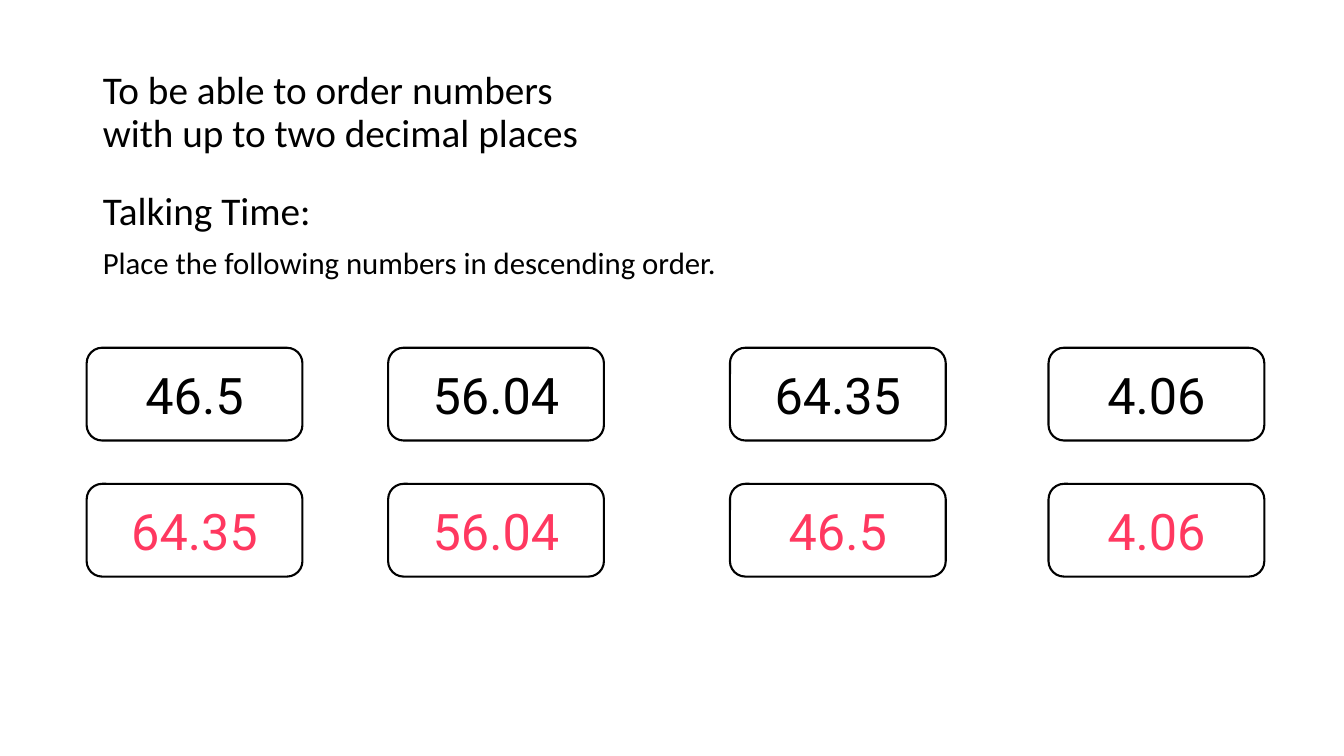
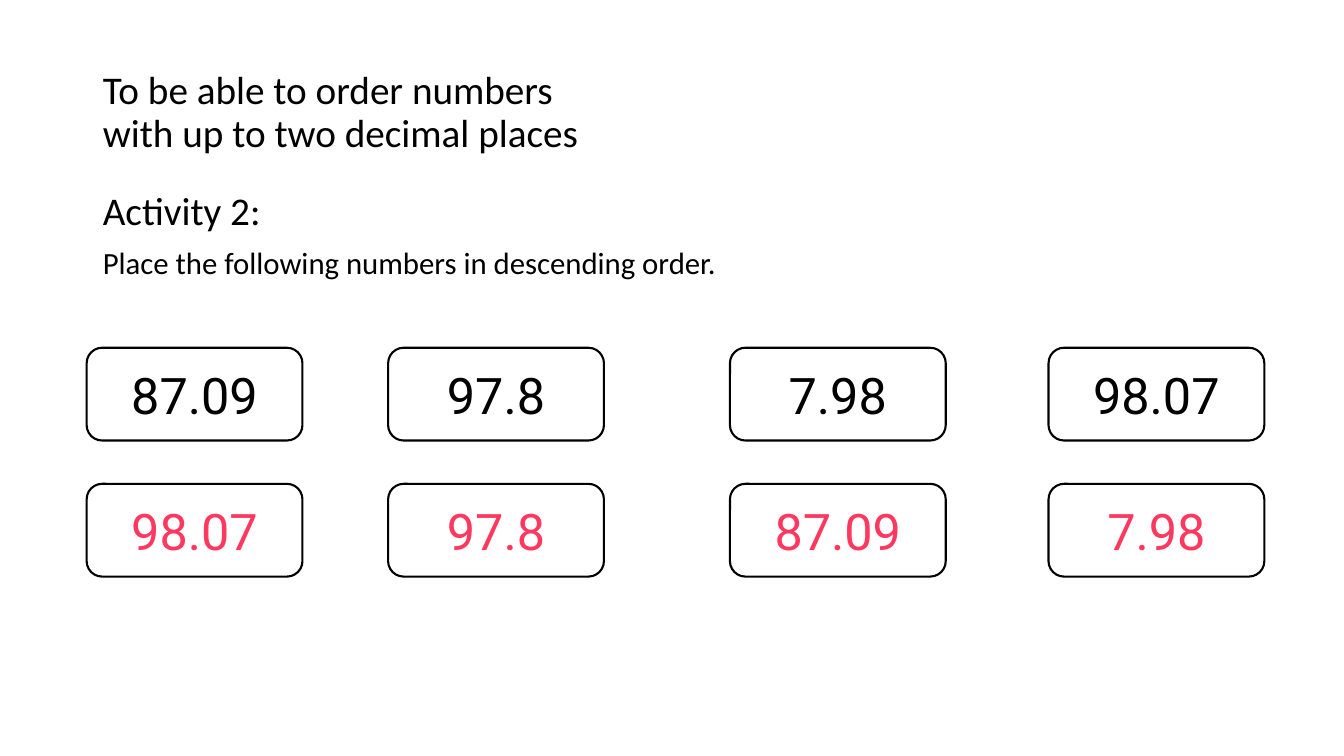
from dataclasses import dataclass

from lxml import etree
from pptx import Presentation
from pptx.dml.color import RGBColor
from pptx.enum.shapes import MSO_SHAPE
from pptx.enum.text import MSO_ANCHOR, MSO_AUTO_SIZE, PP_ALIGN
from pptx.oxml.ns import qn
from pptx.util import Emu, Pt

ROUND = MSO_SHAPE.ROUNDED_RECTANGLE
LEFT, CENTER = PP_ALIGN.LEFT, PP_ALIGN.CENTER
MIDDLE, TOP = MSO_ANCHOR.MIDDLE, MSO_ANCHOR.TOP
NO_FIT = MSO_AUTO_SIZE.NONE
SCALE = 9144  # EMU in one px, 100 px to the inch


@dataclass(frozen=True)
class Theme:
    ink: RGBColor = RGBColor(0x00, 0x00, 0x00)
    paper: RGBColor = RGBColor(0xFF, 0xFF, 0xFF)
    answer: RGBColor = RGBColor(0xFF, 0x38, 0x60)
    font: str = "Calibri"
    digit: str = "Roboto"
    head: int = 28
    task: int = 22
    number: int = 36
    line: float = 1.5


THEME = Theme()

# Shared places, in px
SIZE = (1333, 750)
TITLE_BOX = (92, 40, 1150, 145)
BODY_BOX = (92, 185, 1150, 476)
COLUMNS = (86, 385, 724, 1040)
ROWS = (345, 480)
CARD = (214, 92)

# Wording
GOAL = ("To be able to order numbers ", "with up to two decimal places")
TASK = "Place the following numbers in descending order."
PAGES = (
    ("Talking Time:", ("46.5", "56.04", "64.35", "4.06")),
    ("Activity 2:", ("87.09", "97.8", "7.98", "98.07")),
)


def px(*values):
    return [Emu(value * SCALE) for value in values]


def place(shape, box):
    shape.left, shape.top, shape.width, shape.height = px(*box)


def add_run(para, text, size, color=THEME.ink, font=THEME.font):
    run = para.add_run()
    run.text = text
    run.font.size = Pt(size)
    run.font.name = font
    run.font.color.rgb = color


def set_frame(shape, anchor):
    frame = shape.text_frame
    frame.word_wrap = True
    frame.auto_size = NO_FIT
    frame.vertical_anchor = anchor
    return frame


def set_para(para, before=0):
    para.alignment = LEFT
    para.line_spacing = 0.9
    para.space_before = Pt(before)


def drop_bullet(para):
    props = para._p.get_or_add_pPr()
    props.set("marL", "0")
    props.set("indent", "0")
    etree.SubElement(props, qn("a:buNone"))


def add_title(slide):
    title = slide.shapes.title
    place(title, TITLE_BOX)
    para = set_frame(title, MIDDLE).paragraphs[0]
    set_para(para)
    for index, line in enumerate(GOAL):
        if index:
            para.add_line_break()
        add_run(para, line, THEME.head)


def add_body(slide, label):
    body = slide.placeholders[1]
    place(body, BODY_BOX)
    frame = set_frame(body, TOP)
    lines = ((label, THEME.head), (TASK, THEME.task))
    for index, (text, size) in enumerate(lines):
        para = frame.add_paragraph() if index else frame.paragraphs[0]
        set_para(para, before=10)
        drop_bullet(para)
        add_run(para, text, size)


def add_card(slide, left, top, text, color):
    card = slide.shapes.add_shape(ROUND, *px(left, top, *CARD))
    card.shadow.inherit = False
    card.fill.solid()
    card.fill.fore_color.rgb = THEME.paper
    card.line.color.rgb = THEME.ink
    card.line.width = Pt(THEME.line)
    para = set_frame(card, MIDDLE).paragraphs[0]
    para.alignment = CENTER
    add_run(para, text, THEME.number, color, THEME.digit)


def add_cards(slide, numbers):
    # The second row holds the numbers in descending order
    ranked = sorted(numbers, key=float, reverse=True)
    rows = ((numbers, THEME.ink), (ranked, THEME.answer))
    for top, (values, color) in zip(ROWS, rows):
        for left, value in zip(COLUMNS, values):
            add_card(slide, left, top, value, color)


def main():
    deck = Presentation()
    deck.slide_width, deck.slide_height = px(*SIZE)
    layout = deck.slide_layouts[1]
    for label, numbers in PAGES:
        slide = deck.slides.add_slide(layout)
        add_title(slide)
        add_body(slide, label)
        add_cards(slide, numbers)
    deck.save("out.pptx")


if __name__ == "__main__":
    main()
